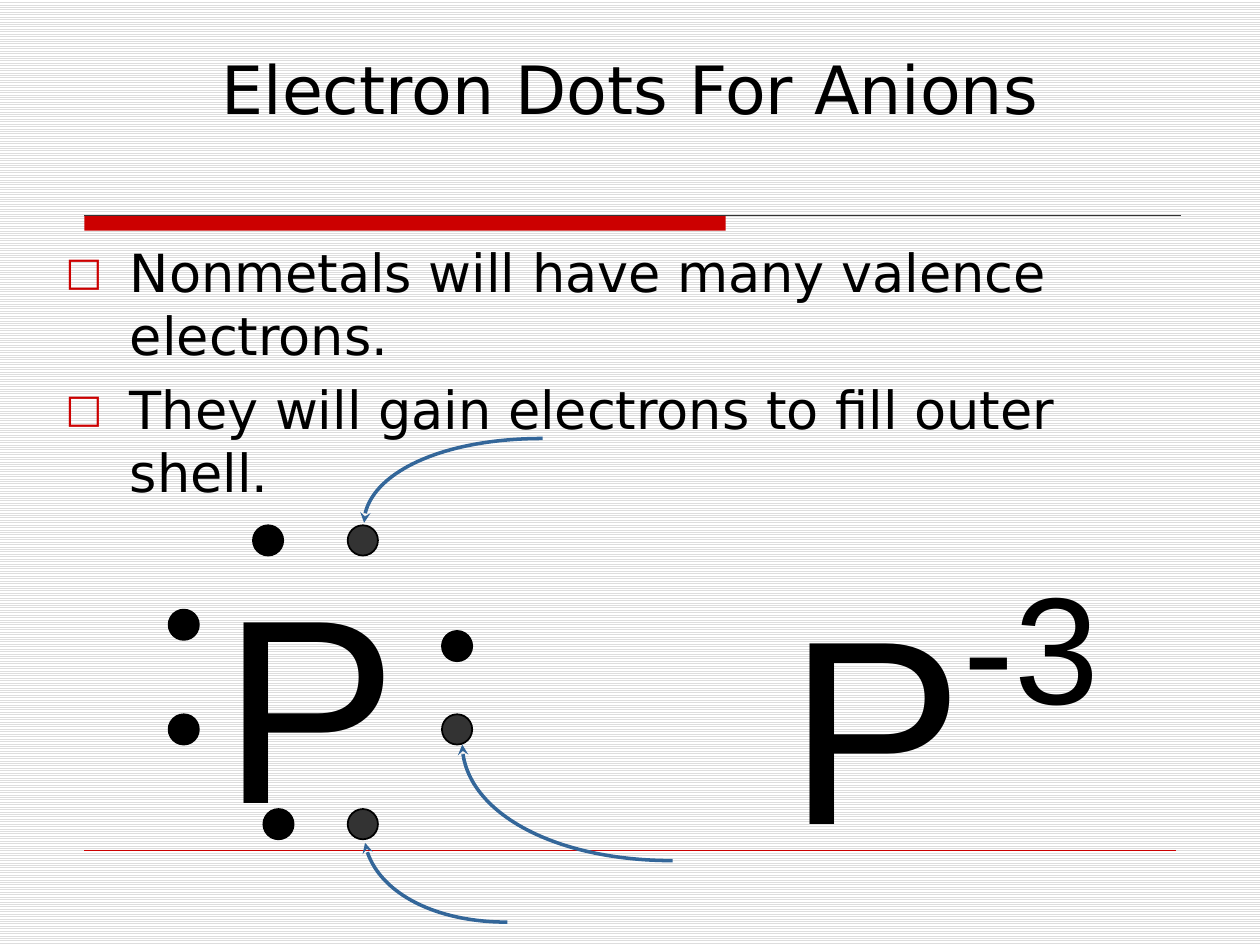
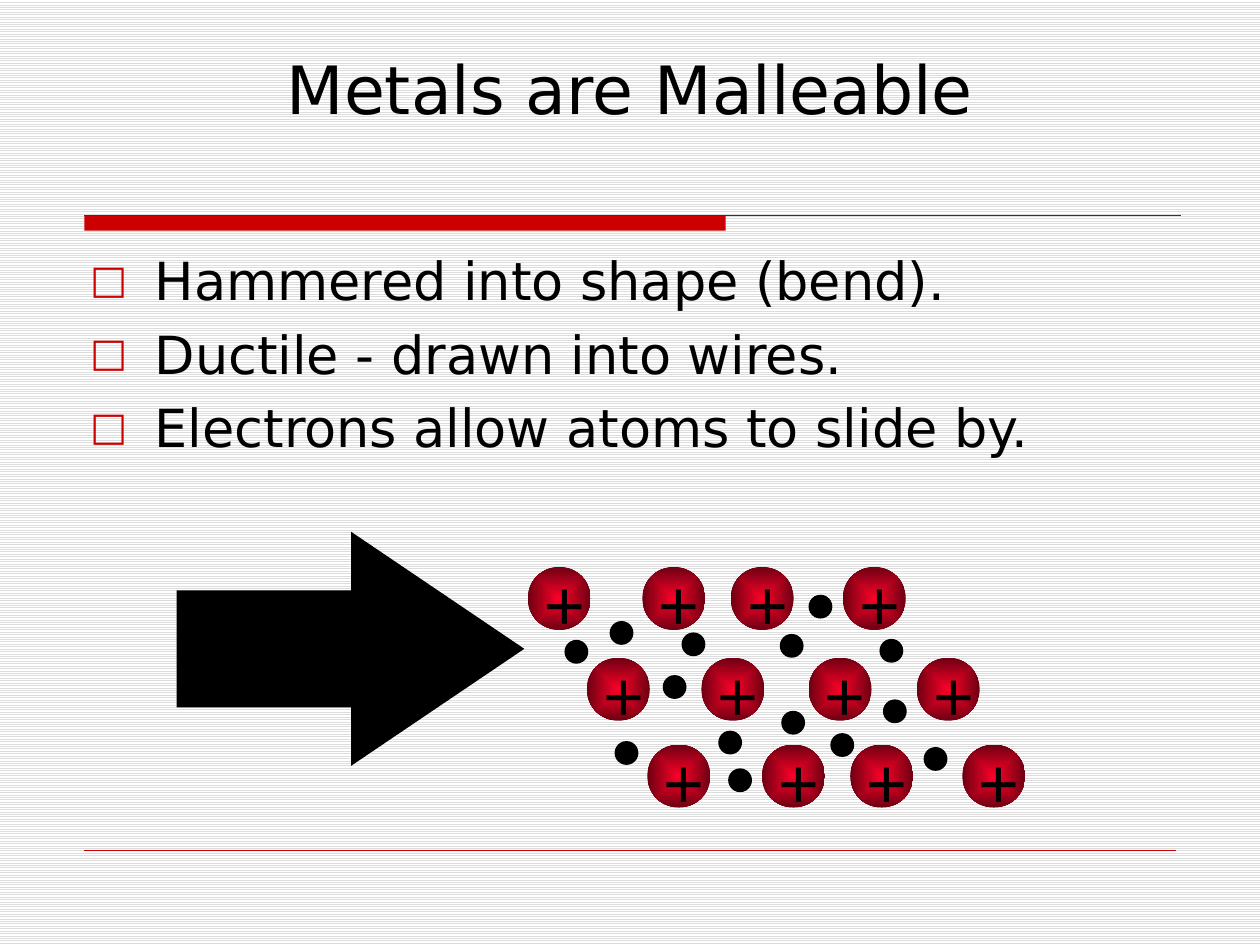
from lxml.etree import SubElement
from pptx import Presentation
from pptx.dml.color import RGBColor
from pptx.enum.dml import MSO_PATTERN
from pptx.enum.shapes import MSO_CONNECTOR, MSO_SHAPE
from pptx.enum.text import MSO_ANCHOR as ANCHOR, PP_ALIGN as ALIGN
from pptx.oxml.ns import qn
from pptx.util import Cm, Pt

COLORS = {
    "paper": "FFFFFF", "stripe": "DDDDDD", "ink": "000000", "accent": "CC0000",
    "rule": "333333", "gained": "333333", "arrow": "336699",
    "ion_core": "FC0128", "ion_edge": "6E0012",
}
BODY_FONT, SYMBOL_FONT = "DejaVu Sans", "Arial"
DOT, ION, ELECTRON = 0.61, 1.27, 0.48

OWN_DOTS = [(1.7, 0), (0, 1.7), (0, 3.81), (5.51, 2.13), (1.91, 5.72)]
GAINED_DOTS = [(3.61, 0), (5.51, 3.81), (3.61, 5.72)]
GAIN_ARROWS = [
    [(7.54, -1.75), (5.56, -1.75), (3.94, -0.99), (3.94, -0.05)],
    [(10.16, 6.76), (7.8, 6.76), (5.92, 5.72), (5.92, 4.42)],
    [(6.83, 8), (5.36, 8), (4.11, 7.32), (3.96, 6.4)],
]
OUTER_ROW, MIDDLE_ROW = (0, 2.31, 4.09, 6.35), (0, 2.31, 4.47, 6.65)
ION_ROWS = [(0, 0, OUTER_ROW), (1.19, 1.83, MIDDLE_ROW), (2.41, 3.58, OUTER_ROW)]
ELECTRONS = [
    (5.66, 0.56), (1.65, 1.09), (3.1, 1.32), (5.08, 1.35), (7.09, 1.45),
    (0.74, 1.47), (2.72, 2.18), (7.16, 2.67), (5.11, 2.9), (3.84, 3.3),
    (6.1, 3.35), (1.75, 3.51), (7.98, 3.63), (4.04, 4.06),
]


def rgb(name):
    """Return the named palette colour."""
    return RGBColor.from_string(COLORS[name])


def box_cm(*lengths):
    """Turn centimetre numbers into lengths."""
    return [Cm(v) for v in lengths]


def sub(parent, tag, **attrs):
    """Append a drawing element with attributes."""
    return SubElement(parent, qn(tag), attrs)


def add_run(p, text, size, font=BODY_FONT, color="ink", baseline=0):
    """Add a formatted run, raised by baseline percent."""
    r = p.add_run()
    r.text = text
    r.font.size, r.font.name = Pt(size), font
    r.font.color.rgb = rgb(color)
    if baseline:
        r._r.get_or_add_rPr().set("baseline", str(baseline * 1000))


def space_before(p, percent):
    """Set paragraph spacing in percent of the text size."""
    pPr = p._p.get_or_add_pPr()
    sub(sub(pPr, "a:spcBef"), "a:spcPct", val=str(percent * 1000))
    return pPr


def text_box(s, box):
    """Add a wrapping text box and return its frame."""
    tf = s.shapes.add_textbox(*box_cm(*box)).text_frame
    tf.word_wrap = True
    return tf


def add_symbol(s, box, text, size, charge=""):
    """Add a large chemical symbol with an optional raised charge."""
    p = text_box(s, box).paragraphs[0]
    space_before(p, 50)
    add_run(p, text, size, font=SYMBOL_FONT)
    if charge:
        add_run(p, charge, size, font=SYMBOL_FONT, baseline=46)


def add_bullets(s, box, items):
    """Add a list with square bullets."""
    tf = text_box(s, box)
    for i, item in enumerate(items):
        p = tf.add_paragraph() if i else tf.paragraphs[0]
        pPr = space_before(p, 20)
        pPr.set("marL", str(Cm(1.3)))
        pPr.set("indent", str(-Cm(1.3)))
        sub(sub(pPr, "a:buClr"), "a:srgbClr", val=COLORS["accent"])
        sub(pPr, "a:buSzPct", val="75000")
        sub(pPr, "a:buFont", typeface=BODY_FONT)
        sub(pPr, "a:buChar", char="□")
        add_run(p, item, 30)


def add_solid(s, kind, box, fill="ink", line=None):
    """Add a flat preset shape."""
    sp = s.shapes.add_shape(kind, *box_cm(*box))
    sp.shadow.inherit = False
    sp.fill.solid()
    sp.fill.fore_color.rgb = rgb(fill)
    if line:
        sp.line.color.rgb, sp.line.width = rgb(line), Pt(1)
    else:
        sp.line.fill.background()
    return sp


def add_rule(s, left, right, y, color, width):
    """Add a horizontal rule."""
    c = s.shapes.add_connector(MSO_CONNECTOR.STRAIGHT, *box_cm(left, y, right, y))
    c.line.color.rgb, c.line.width = rgb(color), Pt(width)
    sub(c._element.spPr, "a:effectLst")


def add_curve(s, left, top, points):
    """Draw a cubic curve with an arrowhead at its end."""
    pts = [box_cm(left + x, top + y) for x, y in points]
    fb = s.shapes.build_freeform(*pts[0])
    fb.add_line_segments(pts[1:], close=False)
    sp = fb.convert_to_shape()
    sp.shadow.inherit = False
    sp.fill.background()
    sp.line.color.rgb, sp.line.width = rgb("arrow"), Pt(2)
    sub(sp.line._get_or_add_ln(), "a:tailEnd", type="stealth")
    steps = list(sp._element.iter(qn("a:lnTo")))
    bezier = sub(steps[0].getparent(), "a:cubicBezTo")
    for step in steps:
        bezier.append(step[0])
        step.getparent().remove(step)


def add_ion(s, x, y):
    """Add a shaded positive ion."""
    sp = add_solid(s, MSO_SHAPE.OVAL, (x, y, ION, ION))
    sp.fill.gradient()
    for stop, name in zip(sp.fill.gradient_stops, ("ion_core", "ion_edge")):
        stop.color.rgb = rgb(name)
    grad = sp._element.spPr.find(qn("a:gradFill"))
    grad.remove(grad.find(qn("a:lin")))
    center = dict.fromkeys("ltrb", "50000")
    sub(sub(grad, "a:path", path="shape"), "a:fillToRect", **center)
    add_symbol(s, (x + 0.08, y - 0.25, 0.84, 1.96), "+", 40)


def base_slide(prs, title):
    """Add a slide with the striped background, rules and title."""
    s = prs.slides.add_slide(prs.slide_layouts[5])
    fill = s.background.fill
    fill.patterned()
    fill.pattern = MSO_PATTERN.LIGHT_HORIZONTAL
    fill.fore_color.rgb, fill.back_color.rgb = rgb("stripe"), rgb("paper")
    add_solid(s, MSO_SHAPE.RECTANGLE, (1.7, 4.34, 12.93, 0.31), "accent")
    add_rule(s, 1.7, 23.8, 4.34, "rule", 0.75)
    add_rule(s, 1.7, 23.7, 17.15, "accent", 0.25)
    sp = s.shapes.title
    sp.left, sp.top, sp.width, sp.height = box_cm(1.59, 0.84, 22.23, 1.85)
    tf = sp.text_frame
    tf.vertical_anchor = ANCHOR.TOP
    p = tf.paragraphs[0]
    p.alignment = ALIGN.CENTER
    add_run(p, title, 38)
    return s


def dot_diagram(s, left, top):
    """Draw the symbol with its own and gained electrons."""
    add_symbol(s, (left + 0.84, top + 0.2, 5.72, 6.6), "P", 150)
    for dots, fill in ((OWN_DOTS, "ink"), (GAINED_DOTS, "gained")):
        for x, y in dots:
            add_solid(s, MSO_SHAPE.OVAL, (left + x, top + y, DOT, DOT), fill, "ink")
    for points in GAIN_ARROWS:
        add_curve(s, left, top, points)


def metal_lattice(s, left, top):
    """Draw shifted rows of ions among free electrons."""
    for shift, y, row in ION_ROWS:
        for x in row:
            add_ion(s, left + shift + x, top + y)
    for x, y in ELECTRONS:
        add_solid(s, MSO_SHAPE.OVAL, (left + x, top + y, ELECTRON, ELECTRON))


def anion_slide(prs):
    """Build the slide on anions."""
    s = base_slide(prs, "Electron Dots For Anions")
    add_bullets(s, (1.07, 4.72, 22.43, 5.23), [
        "Nonmetals will have many valence electrons.",
        "They will gain electrons to fill outer shell.",
    ])
    dot_diagram(s, 3.4, 10.59)
    add_symbol(s, (15.65, 11, 7.42, 6.6), "P", 150, charge="-3")


def malleable_slide(prs):
    """Build the slide on malleable metals."""
    s = base_slide(prs, "Metals are Malleable")
    add_bullets(s, (1.57, 4.88, 22.23, 11.86), [
        "Hammered into shape (bend).",
        "Ductile - drawn into wires.",
        "Electrons allow atoms to slide by.",
    ])
    metal_lattice(s, 10.64, 11.43)
    arrow = add_solid(s, MSO_SHAPE.RIGHT_ARROW, (3.56, 10.72, 7.01, 4.72))
    arrow.adjustments[0], arrow.adjustments[1] = 0.5, 0.74


def main():
    """Build and save the presentation."""
    prs = Presentation()
    prs.slide_width, prs.slide_height = box_cm(25.4, 19.05)
    anion_slide(prs)
    malleable_slide(prs)
    prs.save("out.pptx")


if __name__ == "__main__":
    main()
